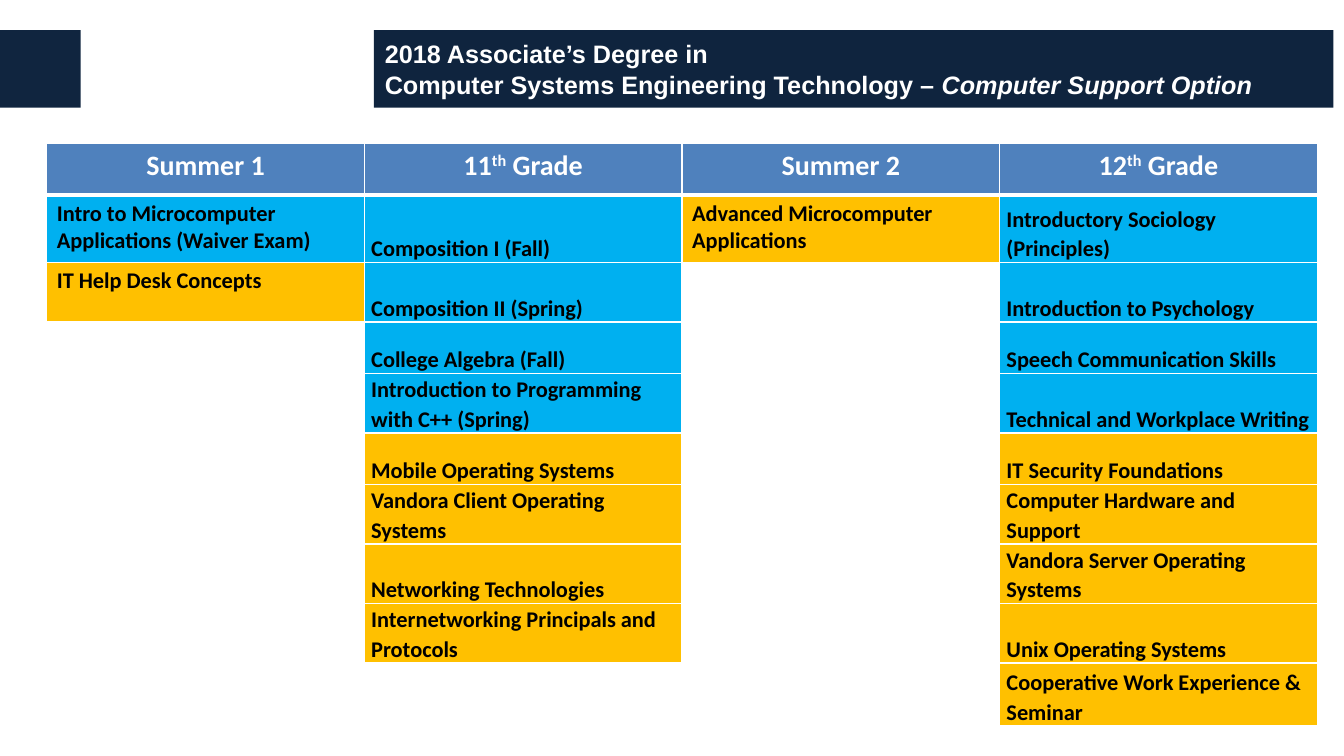
from lxml.etree import SubElement
from pptx import Presentation
from pptx.dml.color import RGBColor
from pptx.enum.shapes import MSO_SHAPE
from pptx.enum.text import MSO_ANCHOR, PP_ALIGN
from pptx.oxml.ns import qn
from pptx.util import Pt

COLORS = {
    "edge": "10253F",
    "banner": "0F243E",
    "header": "4F81BD",
    "general": "00B0F0",
    "technical": "FFC000",
    "white": "FFFFFF",
    "black": "000000",
}
TITLE_FORMAT = {"name": "Arial", "size": Pt(18), "bold": True}
HEADER_FORMAT = {"name": "Calibri", "size": Pt(20), "bold": True}
COURSE_FORMAT = {"name": "Calibri", "size": Pt(16), "bold": True}
TIGHT_CELL = {
    "vertical_anchor": MSO_ANCHOR.BOTTOM,
    "margin_left": Pt(4.9),
    "margin_right": Pt(4.9),
    "margin_top": Pt(0),
    "margin_bottom": Pt(0),
}

ROW_HEIGHTS = [36.8, 48.4, 42.5, 36.8, 42.5, 36.8, 42.5, 42.5, 42.5, 45]
COLUMN_WIDTH = 226.9
TERMS = [
    {
        "heading": ["Summer 1"],
        "general": ["Intro to Microcomputer Applications (Waiver Exam)"],
        "technical": ["IT Help Desk Concepts"],
        "tight": False,
    },
    {
        "heading": ["11", "th", " Grade"],
        "general": [
            "Composition\u00a0I (Fall)",
            "Composition\u00a0II (Spring)",
            "College Algebra (Fall)",
            "Introduction to Programming with C++ (Spring)",
        ],
        "technical": [
            "Mobile Operating Systems",
            "Vandora Client Operating Systems",
            "Networking Technologies",
            "Internetworking Principals and Protocols",
        ],
        "tight": True,
    },
    {
        "heading": ["Summer 2"],
        "general": [],
        "technical": ["Advanced Microcomputer Applications"],
        "tight": False,
    },
    {
        "heading": ["12", "th", " Grade"],
        "general": [
            "Introductory Sociology (Principles)",
            "Introduction to Psychology",
            "Speech Communication Skills",
            "Technical and Workplace Writing",
        ],
        "technical": [
            "IT Security Foundations",
            "Computer Hardware and Support",
            "Vandora Server Operating Systems",
            "Unix Operating Systems",
            "Cooperative Work Experience & Seminar",
        ],
        "tight": True,
    },
]


def set_attributes(target, values):
    """Set each named attribute of the target."""
    for name, value in values.items():
        setattr(target, name, value)


def add_run(paragraph, text, text_format, color):
    """Add formatted text to a paragraph and return its run."""
    run = paragraph.add_run()
    run.text = text
    set_attributes(run.font, text_format)
    run.font.color.rgb = RGBColor.from_string(COLORS[color])
    return run


def add_bar(slide, left, width, color):
    """Draw one plain bar of the title band."""
    shape = slide.shapes.add_shape(
        MSO_SHAPE.RECTANGLE, Pt(left), Pt(21.6), Pt(width), Pt(55.4)
    )
    shape.shadow.inherit = False
    shape.fill.solid()
    shape.fill.fore_color.rgb = RGBColor.from_string(COLORS[color])
    shape.line.fill.background()


def add_title(slide):
    """Write the two-line title over the banner."""
    shape = slide.shapes.add_textbox(Pt(267.8), Pt(21.6), Pt(681), Pt(55.4))
    frame = shape.text_frame
    set_attributes(frame, {"word_wrap": True, "vertical_anchor": MSO_ANCHOR.MIDDLE})
    paragraph = frame.paragraphs[0]
    add_run(paragraph, "2018 Associate’s Degree in", TITLE_FORMAT, "white")
    paragraph.add_line_break()
    add_run(paragraph, "Computer Systems Engineering Technology – ", TITLE_FORMAT, "white")
    option_format = {**TITLE_FORMAT, "italic": True}
    add_run(paragraph, "Computer Support Option", option_format, "white")


def set_borders(cell, bottom_width):
    """Give a cell white borders with the chosen bottom width."""
    properties = cell._tc.get_or_add_tcPr()
    widths = {"lnL": 1, "lnR": 1, "lnT": 1, "lnB": bottom_width}
    for tag, width in widths.items():
        line = SubElement(properties, qn(f"a:{tag}"), w=str(Pt(width)))
        fill = SubElement(line, qn("a:solidFill"))
        SubElement(fill, qn("a:srgbClr"), val=COLORS["white"])


def fill_cell(cell, color):
    """Fill a cell with a named colour."""
    cell.fill.solid()
    cell.fill.fore_color.rgb = RGBColor.from_string(COLORS[color])


def write_heading(cell, parts):
    """Write a term heading with its ordinal suffix raised."""
    fill_cell(cell, "header")
    paragraph = cell.text_frame.paragraphs[0]
    paragraph.alignment = PP_ALIGN.CENTER
    for part in parts:
        run = add_run(paragraph, part, HEADER_FORMAT, "white")
        if part == "th":
            run._r.get_or_add_rPr().set("baseline", "30000")


def write_course(cell, course, category, tight):
    """Write a course in the colour of its category."""
    fill_cell(cell, category)
    paragraph = cell.text_frame.paragraphs[0]
    if tight:
        set_attributes(cell, TIGHT_CELL)
        paragraph.line_spacing = 1.07
    add_run(paragraph, course, COURSE_FORMAT, "black")


def add_course_table(slide):
    """Build the table with one column for each term."""
    table = slide.shapes.add_table(
        len(ROW_HEIGHTS), len(TERMS), Pt(33.4), Pt(102.4),
        Pt(COLUMN_WIDTH * len(TERMS)), Pt(sum(ROW_HEIGHTS)),
    ).table
    table.horz_banding = False
    for row, height in zip(table.rows, ROW_HEIGHTS):
        row.height = Pt(height)
    for column_index, term in enumerate(TERMS):
        table.columns[column_index].width = Pt(COLUMN_WIDTH)
        courses = [
            (course, category)
            for category in ("general", "technical")
            for course in term[category]
        ]
        for row_index in range(len(ROW_HEIGHTS)):
            cell = table.cell(row_index, column_index)
            set_borders(cell, 3 if row_index == 0 else 1)
            if row_index == 0:
                write_heading(cell, term["heading"])
            elif row_index <= len(courses):
                write_course(cell, *courses[row_index - 1], term["tight"])
            else:
                cell.fill.background()


def main():
    """Build and save the degree plan slide."""
    presentation = Presentation()
    set_attributes(presentation, {"slide_width": Pt(960), "slide_height": Pt(540)})
    slide = presentation.slides.add_slide(presentation.slide_layouts[6])
    add_bar(slide, 0, 57.6, "edge")
    add_bar(slide, 267.1, 685.4, "banner")
    add_title(slide)
    add_course_table(slide)
    presentation.save("out.pptx")


if __name__ == "__main__":
    main()
